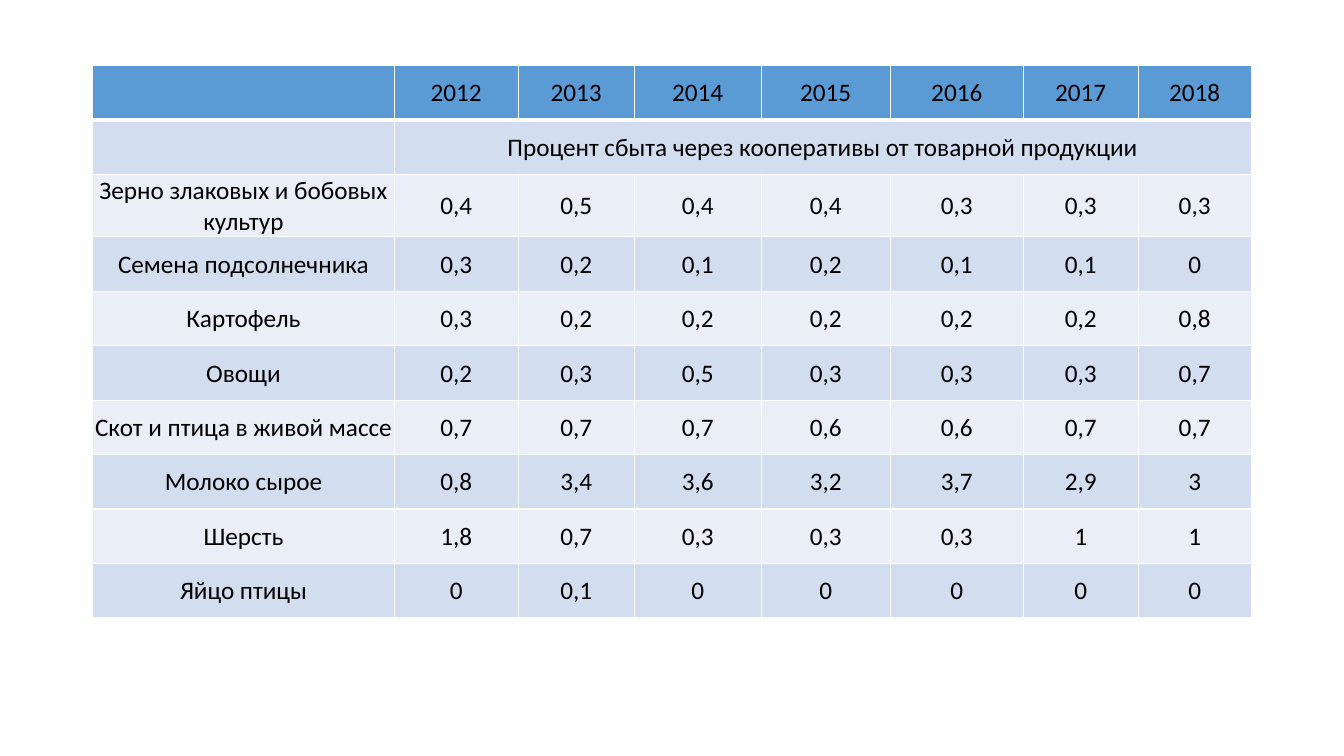
from dataclasses import dataclass

from lxml import etree
from pptx import Presentation
from pptx.dml.color import RGBColor
from pptx.enum import text
from pptx.oxml import ns
from pptx.table import _Cell
from pptx.util import Inches, Pt


@dataclass
class TableRow:
    label: str
    values: list[str]
    fill: str
    top_width: int = 1
    bottom_width: int = 1


HEADER_FILL = "5B9BD5"
BAND_FILLS = ("D2DEEF", "EAEFF7")
BORDER_COLOUR = "FFFFFF"
ROW_HEIGHT = 0.54
COLUMN_WIDTHS = (2.99, 1.23, 1.15, 1.26, 1.28, 1.32, 1.14, 1.12)
SUBTITLE = "Процент сбыта через кооперативы от товарной продукции"
SALES = {
    "Зерно злаковых и бобовых культур": "0,4 0,5 0,4 0,4 0,3 0,3 0,3",
    "Семена подсолнечника": "0,3 0,2 0,1 0,2 0,1 0,1 0",
    "Картофель": "0,3 0,2 0,2 0,2 0,2 0,2 0,8",
    "Овощи": "0,2 0,3 0,5 0,3 0,3 0,3 0,7",
    "Скот и птица в живой массе": "0,7 0,7 0,7 0,6 0,6 0,7 0,7",
    "Молоко сырое": "0,8 3,4 3,6 3,2 3,7 2,9 3",
    "Шерсть": "1,8 0,7 0,3 0,3 0,3 1 1",
    "Яйцо птицы": "0 0,1 0 0 0 0 0",
}
CELL_FORMAT = {
    "margin_left": Inches(0.01),
    "margin_top": Inches(0.01),
    "margin_right": Inches(0.01),
    "margin_bottom": 0,
    "vertical_anchor": text.MSO_ANCHOR.MIDDLE,
}
FONT_FORMAT = {"name": "Calibri", "size": Pt(18), "bold": False}


def colour(value: str) -> RGBColor:
    return RGBColor.from_string(value)


def add_borders(cell: _Cell, row: TableRow) -> None:
    properties = cell._tc.get_or_add_tcPr()
    widths = {"L": 1, "R": 1, "T": row.top_width, "B": row.bottom_width}
    for side, width in widths.items():
        line = etree.SubElement(properties, ns.qn(f"a:ln{side}"), w=str(Pt(width)))
        fill = etree.SubElement(line, ns.qn("a:solidFill"))
        etree.SubElement(fill, ns.qn("a:srgbClr"), val=BORDER_COLOUR)


def format_cell(cell: _Cell, content: str, row: TableRow) -> None:
    add_borders(cell, row)
    cell.fill.solid()
    cell.fill.fore_color.rgb = colour(row.fill)
    for name, value in CELL_FORMAT.items():
        setattr(cell, name, value)
    cell.text = content
    paragraph = cell.text_frame.paragraphs[0]
    paragraph.alignment = text.PP_ALIGN.CENTER
    for name, value in FONT_FORMAT.items():
        setattr(paragraph.font, name, value)
    paragraph.font.color.rgb = colour("000000")


def build_rows() -> list[TableRow]:
    years = [str(year) for year in range(2012, 2019)]
    header = TableRow("", years, HEADER_FILL, bottom_width=3)
    subtitle = TableRow("", [SUBTITLE] + [""] * 6, BAND_FILLS[0], top_width=3)
    products = [
        TableRow(label, values.split(), BAND_FILLS[index % 2])
        for index, (label, values) in enumerate(SALES.items(), start=1)
    ]
    return [header, subtitle, *products]


def main() -> None:
    presentation = Presentation()
    presentation.slide_width = Inches(13.33)
    presentation.slide_height = Inches(7.5)
    slide = presentation.slides.add_slide(presentation.slide_layouts[6])

    rows = build_rows()
    table = slide.shapes.add_table(
        len(rows), len(COLUMN_WIDTHS), Inches(0.92), Inches(0.65),
        Inches(sum(COLUMN_WIDTHS)), Inches(ROW_HEIGHT * len(rows)),
    ).table
    for column, width in zip(table.columns, COLUMN_WIDTHS):
        column.width = Inches(width)
    for row_index, row in enumerate(rows):
        table.rows[row_index].height = Inches(ROW_HEIGHT)
        for column_index, content in enumerate([row.label, *row.values]):
            format_cell(table.cell(row_index, column_index), content, row)
    table.cell(1, 1).merge(table.cell(1, len(COLUMN_WIDTHS) - 1))

    presentation.save("out.pptx")


if __name__ == "__main__":
    main()
